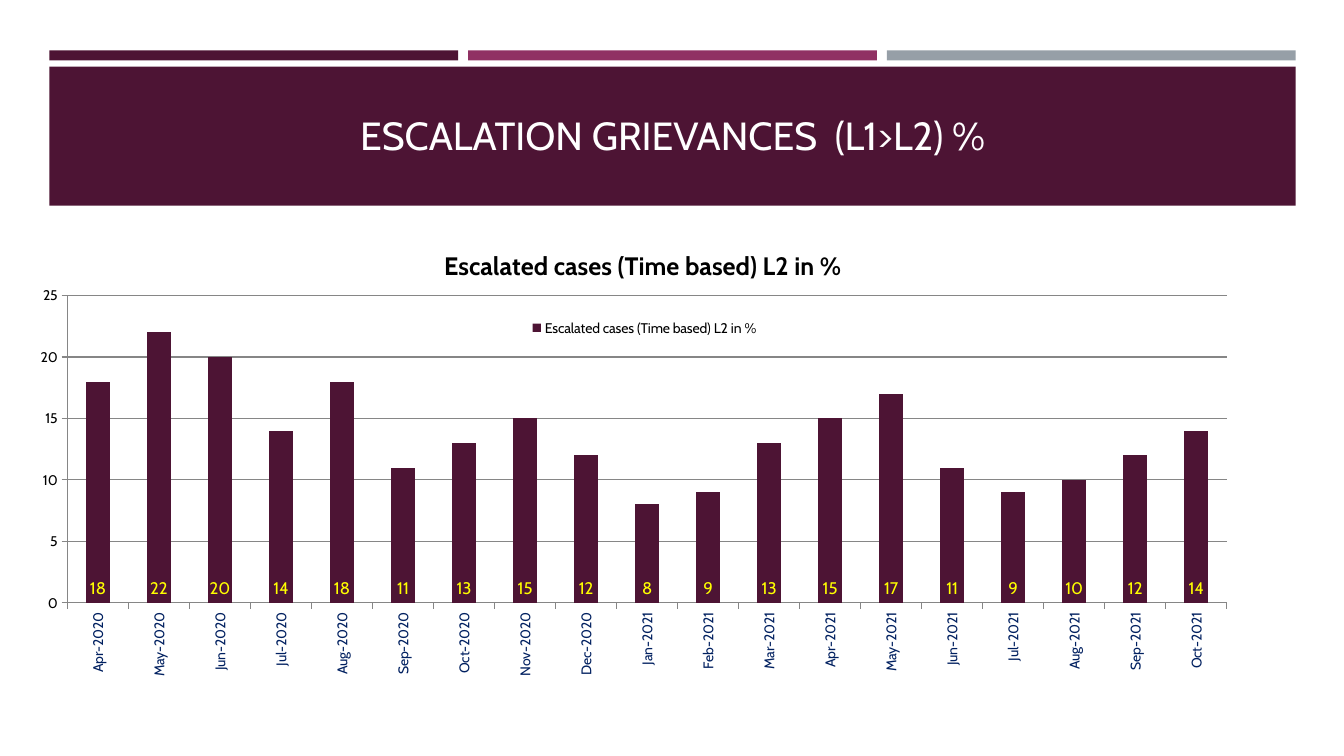
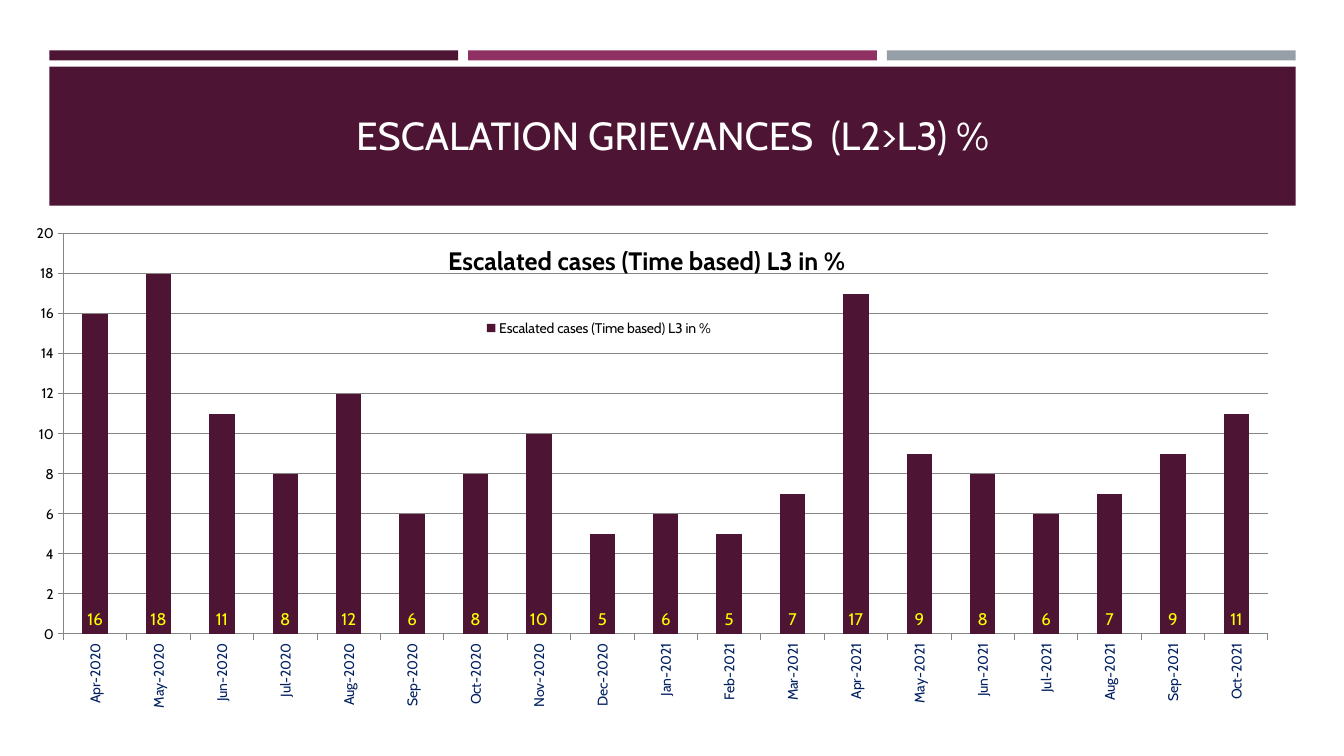
from pptx import Presentation
from pptx.chart.data import CategoryChartData
from pptx.dml.color import RGBColor
from pptx.enum.chart import XL_CHART_TYPE, XL_LABEL_POSITION, XL_LEGEND_POSITION, XL_TICK_MARK
from pptx.enum.shapes import MSO_SHAPE
from pptx.enum.text import MSO_ANCHOR, MSO_AUTO_SIZE, PP_ALIGN
from pptx.oxml import parse_xml
from pptx.oxml.ns import nsdecls
from pptx.util import Inches, Pt

THEME = {
    "font": "Cabin",
    "plum": RGBColor.from_string("4D1434"),
    "magenta": RGBColor.from_string("903163"),
    "grey": RGBColor.from_string("969FA7"),
    "rule": RGBColor.from_string("868686"),
    "white": RGBColor.from_string("FFFFFF"),
    "black": RGBColor.from_string("000000"),
    "navy": RGBColor.from_string("002060"),
    "yellow": RGBColor.from_string("FFFF00"),
    "title": Pt(28),
    "heading": Pt(18),
    "label": Pt(12),
    "body": Pt(10),
}

# Page grid, in inches: three columns across the header
MARGIN, CONTENT, GAP, COLUMNS = 0.49, 12.36, 0.1, 3
COLUMN = (CONTENT - GAP * (COLUMNS - 1)) / COLUMNS

MONTHS = "Jan Feb Mar Apr May Jun Jul Aug Sep Oct Nov Dec".split()
PERIODS = [f"{MONTHS[n % 12]}-{2020 + n // 12}" for n in range(3, 22)]

# Plot and legend places are shares of the chart's size
REPORTS = [
    {"title": "ESCALATION GRIEVANCES  (L1>L2) %",
     "series": "Escalated cases (Time based) L2 in %",
     "values": [18, 22, 20, 14, 18, 11, 13, 15, 12, 8, 9, 13, 15, 17, 11, 9, 10, 12, 14],
     "box": (0.05, 2.28, 12.65, 4.47), "top": 25, "step": 5,
     "plot": {"x": 0.049, "y": 0.146, "w": 0.909, "h": 0.682},
     "legend": {"x": 0.41, "y": 0.19}},
    {"title": "ESCALATION GRIEVANCES  (L2>L3) %",
     "series": "Escalated cases (Time based) L3 in %",
     "values": [16, 18, 11, 8, 12, 6, 8, 10, 5, 6, 5, 7, 17, 9, 8, 6, 7, 9, 11],
     "box": (0.14, 2.21, 12.55, 5.12), "top": 20, "step": 2,
     "plot": {"x": 0.039, "y": 0.021, "w": 0.952, "h": 0.776},
     "legend": {"x": 0.37, "y": 0.18}},
]


def style(target, **formats):
    """Set font attributes; the colour goes to its fill."""
    target.color.rgb = THEME[formats.pop("color")]
    target.name = THEME["font"]
    for name, value in formats.items():
        setattr(target, name, value)


def place(parent, index, shares, target=""):
    """Give a chart part a fixed place inside the chart."""
    for old in parent.xpath("c:layout"):
        parent.remove(old)
    sizes = "".join(f'<c:{key} val="{value}"/>' for key, value in shares.items())
    parent.insert(index, parse_xml(
        f'<c:layout {nsdecls("c")}><c:manualLayout>{target}'
        f'<c:xMode val="edge"/><c:yMode val="edge"/>{sizes}'
        '</c:manualLayout></c:layout>'))


deck = Presentation()
deck.slide_width, deck.slide_height = Inches(13.33), Inches(7.5)
layout = deck.slide_layouts.get_by_name("Title Only")
pages = [deck.slides.add_slide(layout) for report in REPORTS]

# Header bands, shared by all pages through the layout
bands = [(MARGIN + n * (COLUMN + GAP), 0.5, COLUMN, 0.1, color)
         for n, color in enumerate(("plum", "magenta", "grey"))]
bands.append((MARGIN, 0.66, CONTENT, 1.38, "plum"))
for *box, color in bands:
    band = pages[0].shapes.add_shape(MSO_SHAPE.RECTANGLE, *map(Inches, box))
    band.shadow.inherit = False
    band.fill.solid()
    band.fill.fore_color.rgb = THEME[color]
    band.line.fill.background()
    layout.shapes.element.insert(2, band.element)

for page, report in zip(pages, REPORTS):
    # Title
    title = page.shapes.title
    title.left, title.top, title.width, title.height = map(Inches, (0.64, 0.8, 12.06, 0.82))
    frame = title.text_frame
    frame.text = report["title"]
    frame.auto_size = MSO_AUTO_SIZE.NONE
    frame.vertical_anchor = MSO_ANCHOR.BOTTOM
    para = frame.paragraphs[0]
    para.alignment = PP_ALIGN.CENTER
    style(para.runs[0].font, size=THEME["title"], color="white")

    # Chart with its heading
    data = CategoryChartData(number_format="0")
    data.categories = PERIODS
    data.add_series(report["series"], report["values"])
    chart = page.shapes.add_chart(
        XL_CHART_TYPE.COLUMN_CLUSTERED, *map(Inches, report["box"]), data).chart
    style(chart.font, size=THEME["body"], color="black")
    heading = chart.chart_title.text_frame
    heading.text = report["series"]
    style(heading.paragraphs[0].runs[0].font, size=THEME["heading"], bold=True, color="black")

    # Columns and their labels
    plot = chart.plots[0]
    plot.gap_width = 150
    plot.vary_by_categories = False
    columns = plot.series[0]
    columns.format.fill.solid()
    columns.format.fill.fore_color.rgb = THEME["plum"]
    labels = columns.data_labels
    label_format = {"show_value": True, "position": XL_LABEL_POSITION.INSIDE_BASE,
                    "number_format": "0", "number_format_is_linked": False}
    for name, value in label_format.items():
        setattr(labels, name, value)
    style(labels.font, size=THEME["label"], color="yellow")

    # Axes
    periods, scale = chart.category_axis, chart.value_axis
    scale_format = {"minimum_scale": 0, "maximum_scale": report["top"],
                    "major_unit": report["step"], "has_major_gridlines": True}
    for name, value in scale_format.items():
        setattr(scale, name, value)
    scale.tick_labels.number_format = "0"
    scale.tick_labels.number_format_is_linked = False
    for axis, color in ((periods, "navy"), (scale, "black")):
        axis.major_tick_mark = XL_TICK_MARK.OUTSIDE
        axis.format.line.color.rgb = THEME["rule"]
        style(axis.tick_labels.font, size=THEME["body"], color=color)
    scale.major_gridlines.format.line.color.rgb = THEME["rule"]
    turn = chart.element.xpath("c:chart/c:plotArea/c:catAx/c:txPr/a:bodyPr")[0]
    turn.set("rot", "-5400000")
    turn.set("vert", "horz")

    # Legend and fixed places
    chart.has_legend = True
    chart.legend.position = XL_LEGEND_POSITION.RIGHT
    chart.legend.include_in_layout = False
    style(chart.legend.font, size=THEME["body"], color="black")
    place(chart.element.xpath("c:chart/c:legend")[0], 1, report["legend"])
    place(chart.element.xpath("c:chart/c:plotArea")[0], 0, report["plot"],
          '<c:layoutTarget val="inner"/>')

deck.save("out.pptx")
